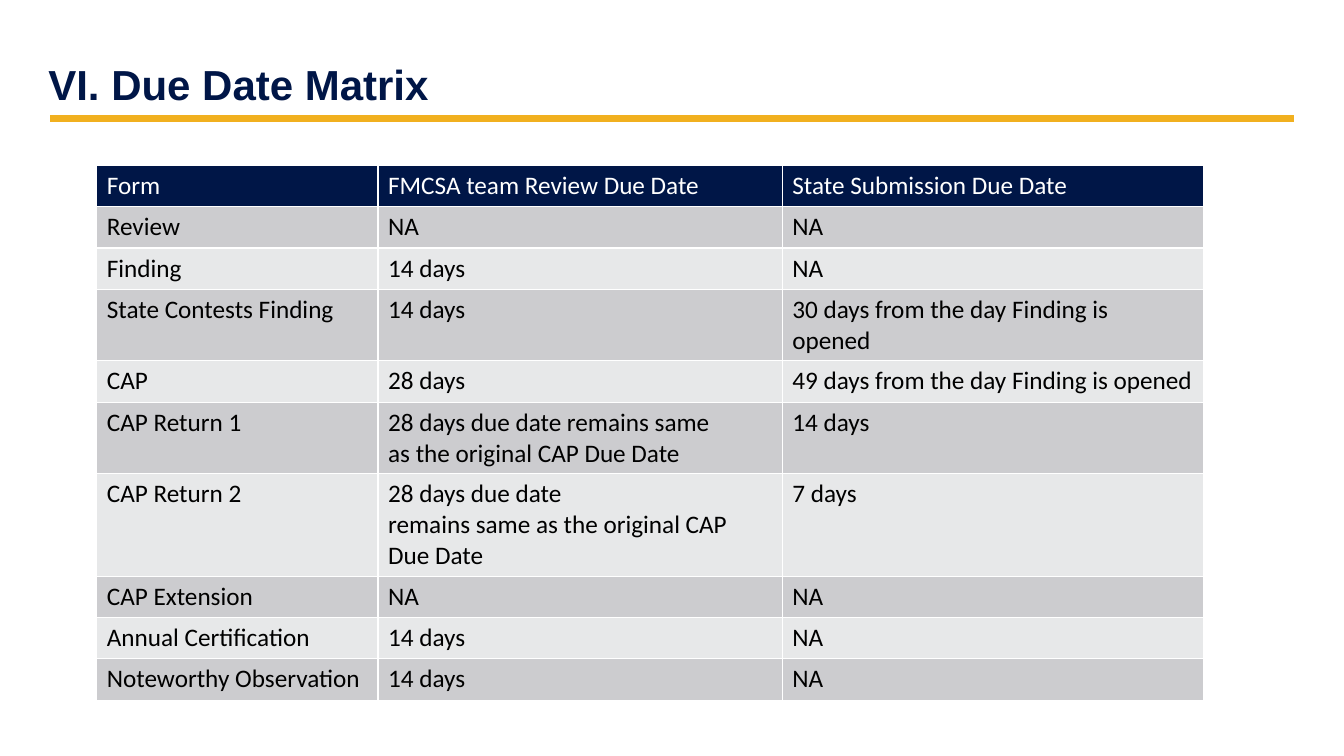
"""Build the due date matrix slide."""
from lxml import etree
from pptx import Presentation
from pptx.dml.color import RGBColor
from pptx.enum.shapes import MSO_CONNECTOR
from pptx.enum.text import MSO_ANCHOR, MSO_AUTO_SIZE, PP_ALIGN
from pptx.oxml.ns import qn
from pptx.util import Inches, Pt

NAVY = RGBColor(0x00, 0x16, 0x47)
GOLD = RGBColor(0xF1, 0xB0, 0x1F)
WHITE = RGBColor(0xFF, 0xFF, 0xFF)
BLACK = RGBColor(0x00, 0x00, 0x00)
BANDS = RGBColor(0xE7, 0xE8, 0xE9), RGBColor(0xCC, 0xCC, 0xCF)
LINE = MSO_CONNECTOR.STRAIGHT
BOTTOM = MSO_ANCHOR.BOTTOM
FIXED = MSO_AUTO_SIZE.NONE
LEFT = PP_ALIGN.LEFT
HARD = chr(160)

COLS = 2.79, 4.01, 4.18
HIGH = 0.41
ROWS = [
    ("Form", "FMCSA team Review Due Date", "State Submission Due Date"),
    ("Review", "NA", "NA"),
    ("Finding", "14 days", "NA"),
    ("State Contests Finding", "14 days",
     "30 days from the day Finding is opened~"),
    ("CAP", "28 days", "49 days from the day Finding is opened"),
    ("CAP Return 1",
     "28 days due date remains same as~the original CAP Due Date", "14 days"),
    ("CAP Return 2",
     "28 days due~date remains~same~as~the original CAP Due Date", "7 days"),
    ("CAP Extension", "NA", "NA"),
    ("Annual Certification", "14 days", "NA"),
    ("Noteworthy Observation", "14 days", "NA"),
]

deck = Presentation()
deck.slide_width, deck.slide_height = Inches(13.33), Inches(7.5)
slide = deck.slides.add_slide(deck.slide_layouts[5])

rule = slide.shapes.add_connector(
    LINE, Inches(0.5), Inches(1.18), Inches(12.83), Inches(1.18))
rule.line.color.rgb = GOLD
rule.line.width = Pt(5)
etree.SubElement(rule._element.spPr, qn("a:effectLst"))

title = slide.shapes.title
title.left, title.top = Inches(0.48), Inches(0.14)
title.width, title.height = Inches(12.33), Inches(1)
frame = title.text_frame
frame.text = "VI. Due Date Matrix"
frame.auto_size = FIXED
frame.vertical_anchor = BOTTOM
frame.margin_left = 0
head = frame.paragraphs[0]
head.alignment = LEFT
head.line_spacing = 0.9
head.font.name = "Arial"
head.font.size = Pt(30)
head.font.bold = True
head.font.color.rgb = NAVY

grid = slide.shapes.add_table(
    len(ROWS), len(COLS), Inches(0.96), Inches(1.64),
    Inches(sum(COLS)), Inches(HIGH * len(ROWS))).table
for col, width in zip(grid.columns, COLS):
    col.width = Inches(width)
for r, row in enumerate(ROWS):
    grid.rows[r].height = Inches(HIGH)
    for c, words in enumerate(row):
        cell = grid.cell(r, c)
        cell.text = words.replace("~", HARD)
        cell.fill.solid()
        cell.fill.fore_color.rgb = BANDS[r % 2] if r else NAVY
        font = cell.text_frame.paragraphs[0].font
        font.name = "Calibri"
        font.size = Pt(18)
        font.bold = False
        font.color.rgb = BLACK if r else WHITE

deck.save("out.pptx")
